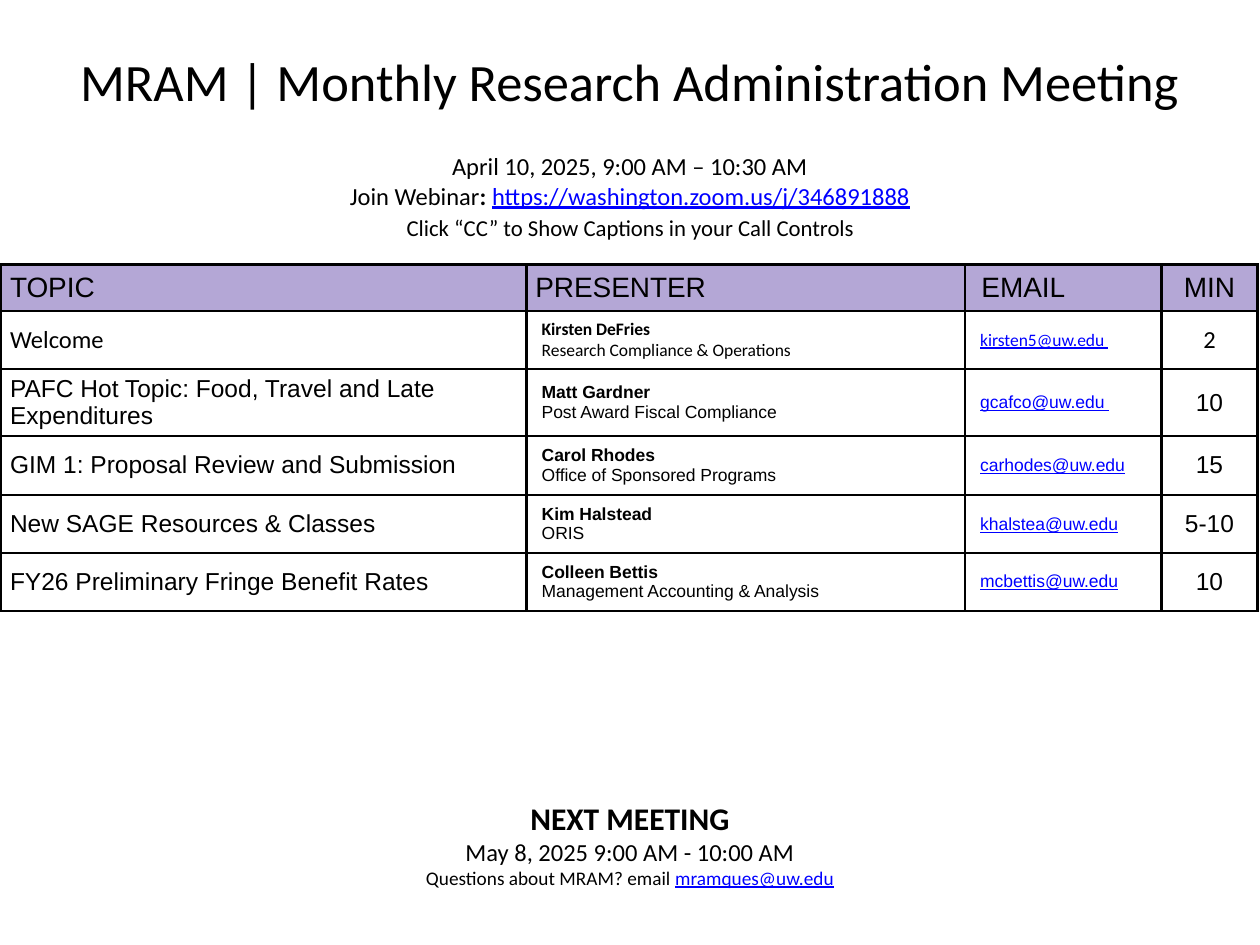
from dataclasses import dataclass

import pptx
import pptx.dml.color
import pptx.enum.text
import pptx.oxml
import pptx.oxml.ns
import pptx.util
from pptx.dml.color import RGBColor

BLACK = RGBColor(0x00, 0x00, 0x00)
WHITE = RGBColor(0xFF, 0xFF, 0xFF)
LINK_BLUE = RGBColor(0x00, 0x00, 0xFF)
LILAC = RGBColor(0xB4, 0xA7, 0xD6)

CENTER = pptx.enum.text.PP_ALIGN.CENTER
LEFT = pptx.enum.text.PP_ALIGN.LEFT

# Table grid, in inches
COLUMN_WIDTHS = (4.17, 3.48, 1.56, 0.76)
ROW_HEIGHTS = (0.37, 0.46, 0.53, 0.47, 0.46, 0.46)
COLUMN_MARGINS = (0.07, 0.12, 0.12, 0.07)
HEADER_MARGINS = (0.07, 0.07, 0.13, 0.07)
COLUMN_ALIGNMENTS = (LEFT, LEFT, LEFT, CENTER)
HEADERS = ("TOPIC", "PRESENTER", "EMAIL", "MIN")


@dataclass(frozen=True)
class Span:
    text: str
    size: float
    font: str = "Calibri"
    bold: bool = False
    link: bool = False


Line = list[Span]


@dataclass(frozen=True)
class AgendaItem:
    topic: str
    presenter: str
    office: str
    email: str
    minutes: str
    small_font: str = "Arial"
    large_font: str = "Arial"

    def cells(self) -> list[list[Line]]:
        return [
            [[Span(self.topic, 14, self.large_font)]],
            [[Span(self.presenter, 10, self.small_font, bold=True)],
             [Span(self.office, 10, self.small_font)]],
            [[Span(self.email, 10, self.small_font, link=True)]],
            [[Span(self.minutes, 14, self.large_font)]],
        ]


AGENDA = [
    AgendaItem("Welcome", "Kirsten DeFries", "Research Compliance & Operations",
               "kirsten5@uw.edu ", "2", "Calibri", "Calibri"),
    AgendaItem("PAFC Hot Topic: Food, Travel and Late Expenditures",
               "Matt Gardner", "Post Award Fiscal Compliance",
               "gcafco@uw.edu ", "10"),
    AgendaItem("GIM 1: Proposal Review and Submission", "Carol Rhodes",
               "Office of Sponsored Programs", "carhodes@uw.edu", "15"),
    AgendaItem("New SAGE Resources & Classes", "Kim Halstead", "ORIS",
               "khalstea@uw.edu", "5-10"),
    AgendaItem("FY26 Preliminary Fringe Benefit Rates", "Colleen Bettis",
               "Management Accounting & Analysis", "mcbettis@uw.edu", "10"),
]


def write_lines(frame, lines: list[Line], alignment) -> None:
    for index, line in enumerate(lines):
        paragraph = frame.paragraphs[0] if index == 0 else frame.add_paragraph()
        paragraph.alignment = alignment
        for span in line:
            run = paragraph.add_run()
            run.text = span.text
            run.font.name = span.font
            run.font.size = pptx.util.Pt(span.size)
            run.font.bold = span.bold
            run.font.underline = span.link
            run.font.color.rgb = LINK_BLUE if span.link else BLACK


def add_centered_text(slide, top: float, height: float, lines: list[Line]):
    box = slide.shapes.add_textbox(0, pptx.util.Inches(top),
                                   pptx.util.Inches(10), pptx.util.Inches(height))
    frame = box.text_frame
    frame.word_wrap = True
    frame.margin_left = frame.margin_right = pptx.util.Inches(0.1)
    frame.margin_top = frame.margin_bottom = pptx.util.Inches(0.1)
    write_lines(frame, lines, CENTER)
    return frame


def add_borders(cell) -> None:
    properties = cell._tc.get_or_add_tcPr()
    for position, side in enumerate(("lnL", "lnR", "lnT", "lnB")):
        border = pptx.oxml.parse_xml(
            f'<a:{side} {pptx.oxml.ns.nsdecls("a")} w="{pptx.util.Pt(1.5)}">'
            f'<a:solidFill><a:srgbClr val="{BLACK}"/></a:solidFill></a:{side}>')
        properties.insert(position, border)


def fill_cell(cell, lines: list[Line], alignment, margin: float,
              color: RGBColor) -> None:
    cell.margin_left = pptx.util.Inches(margin)
    cell.margin_right = pptx.util.Inches(0.07)
    cell.margin_top = cell.margin_bottom = 0
    cell.vertical_anchor = pptx.enum.text.MSO_ANCHOR.MIDDLE
    cell.fill.solid()
    cell.fill.fore_color.rgb = color
    add_borders(cell)
    write_lines(cell.text_frame, lines, alignment)


def add_agenda(slide) -> None:
    header = [[[Span(title, 16, "Arial")]] for title in HEADERS]
    rows = [header] + [item.cells() for item in AGENDA]
    agenda = slide.shapes.add_table(
        len(rows), len(HEADERS), pptx.util.Inches(0.01), pptx.util.Inches(2.1),
        pptx.util.Inches(sum(COLUMN_WIDTHS)),
        pptx.util.Inches(sum(ROW_HEIGHTS))).table
    for column, width in zip(agenda.columns, COLUMN_WIDTHS):
        column.width = pptx.util.Inches(width)
    for row, height in zip(agenda.rows, ROW_HEIGHTS):
        row.height = pptx.util.Inches(height)
    for r, row in enumerate(rows):
        margins = COLUMN_MARGINS if r else HEADER_MARGINS
        for c, lines in enumerate(row):
            fill_cell(agenda.cell(r, c), lines, COLUMN_ALIGNMENTS[c],
                      margins[c], WHITE if r else LILAC)


def main() -> None:
    deck = pptx.Presentation()
    deck.slide_width = pptx.util.Inches(10)
    deck.slide_height = pptx.util.Inches(7.5)
    slide = deck.slides.add_slide(deck.slide_layouts[6])

    # Title
    add_centered_text(slide, 0.29, 0.82, [
        [Span("MRAM | Monthly Research Administration Meeting", 30)]])

    # Date and webinar details
    details = add_centered_text(slide, 1.1, 1, [
        [Span("April 10, 2025, 9:00 AM – 10:30 AM", 14)],
        [Span("Join Webinar", 14), Span(": ", 14, bold=True),
         Span("https://washington.zoom.us/j/346891888", 14, link=True)],
        [Span("Click “CC” to Show Captions in your Call Controls", 13)]])
    details.paragraphs[-1].line_spacing = 1.15

    # Agenda
    add_agenda(slide)

    # Next meeting
    add_centered_text(slide, 6.24, 0.88, [
        [Span("NEXT MEETING", 18, bold=True)],
        [Span("May 8, 2025 9:00 AM - 10:00 AM", 14)],
        [Span("Questions about MRAM? email ", 11),
         Span("mramques@uw.edu", 11, link=True)]])

    deck.save("out.pptx")


if __name__ == "__main__":
    main()
